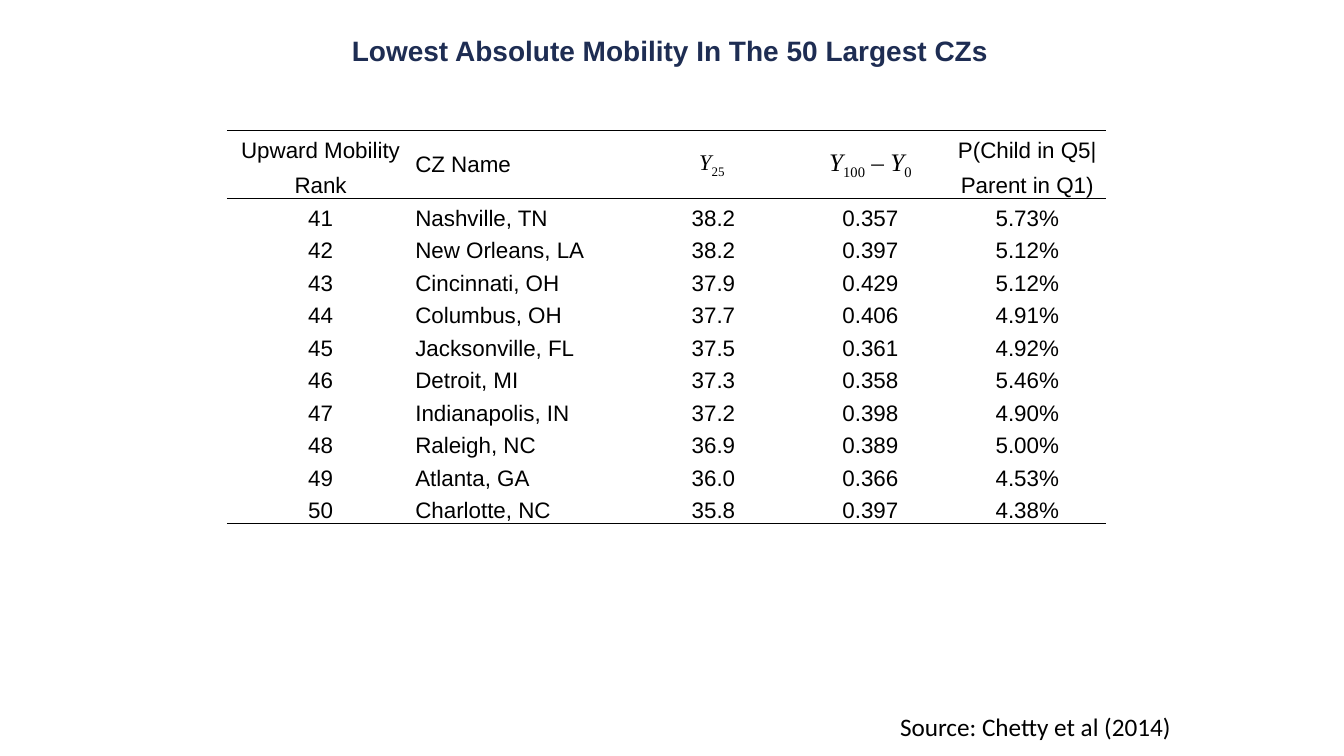
import pptx
import pptx.dml.color
import pptx.enum.text
import pptx.oxml.ns
import pptx.util
from lxml import etree

Pt = pptx.util.Pt
ALIGN = pptx.enum.text.PP_ALIGN
ANCHOR = pptx.enum.text.MSO_ANCHOR
INK, NAVY, PAPER = "000000", "1E2D53", "FFFFFF"

COLUMN_WIDTHS = [134, 157.6, 112.1, 112.1, 112.1]
HEADER_HEIGHTS = [23.5, 25.4]
CITY_HEIGHT = 23.2
CITY_COLUMN = 1
MERGED_COLUMNS = (1, 2, 3)

HEADINGS = {
    (0, 0): "Upward Mobility",
    (1, 0): "Rank",
    (0, 1): "CZ Name",
    (0, 4): "P(Child in Q5|",
    (1, 4): "Parent in Q1)",
}
FORMULAS = {
    (0, 2): (16, [("Y", "italic"), ("25 ", "sub")]),
    (0, 3): (18, [("Y", "italic"), ("100", "sub"), (" – ", ""),
                  ("Y", "italic"), ("0", "sub")]),
}
CITIES = [
    ("41", "Nashville, TN", "38.2", "0.357", "5.73%"),
    ("42", "New Orleans, LA", "38.2", "0.397", "5.12%"),
    ("43", "Cincinnati, OH", "37.9", "0.429", "5.12%"),
    ("44", "Columbus, OH", "37.7", "0.406", "4.91%"),
    ("45", "Jacksonville, FL", "37.5", "0.361", "4.92%"),
    ("46", "Detroit, MI", "37.3", "0.358", "5.46%"),
    ("47", "Indianapolis, IN", "37.2", "0.398", "4.90%"),
    ("48", "Raleigh, NC", "36.9", "0.389", "5.00%"),
    ("49", "Atlanta, GA", "36.0", "0.366", "4.53%"),
    ("50", "Charlotte, NC", "35.8", "0.397", "4.38%"),
]


def color(hex_string):
    return pptx.dml.color.RGBColor.from_string(hex_string)


def add_run(paragraph, text, size, face="Arial", ink=INK, bold=False, style=""):
    run = paragraph.add_run()
    run.text = text
    run.font.size = Pt(size)
    run.font.name = face
    run.font.bold = bold
    run.font.italic = style == "italic"
    run.font.color.rgb = color(ink)
    if style == "sub":
        run.font._element.set("baseline", "-25000")


def rule_cell(cell, ruled_sides):
    properties = cell._tc.get_or_add_tcPr()
    for side in "LRTB":
        edge = etree.SubElement(properties, pptx.oxml.ns.qn(f"a:ln{side}"))
        if side in ruled_sides:
            edge.set("w", str(Pt(1)))
            solid = etree.SubElement(edge, pptx.oxml.ns.qn("a:solidFill"))
            etree.SubElement(solid, pptx.oxml.ns.qn("a:srgbClr"), val=INK)
        else:
            etree.SubElement(edge, pptx.oxml.ns.qn("a:noFill"))
    cell.fill.solid()
    cell.fill.fore_color.rgb = color(PAPER)


def fill_cell(cell, row, column):
    merged = row < len(HEADER_HEIGHTS) and column in MERGED_COLUMNS
    cell.margin_left = cell.margin_right = cell.margin_top = Pt(0.7)
    cell.margin_bottom = Pt(0)
    cell.vertical_anchor = ANCHOR.MIDDLE if merged else ANCHOR.BOTTOM
    paragraph = cell.text_frame.paragraphs[0]
    paragraph.alignment = ALIGN.LEFT if column == CITY_COLUMN else ALIGN.CENTER
    if (row, column) in FORMULAS:
        size, parts = FORMULAS[row, column]
        for text, style in parts:
            add_run(paragraph, text, size, "Times New Roman", style=style)
    elif row < len(HEADER_HEIGHTS):
        add_run(paragraph, HEADINGS[row, column], 16)
    else:
        add_run(paragraph, CITIES[row - len(HEADER_HEIGHTS)][column], 16)


def add_mobility_table(slide, left, top):
    heights = HEADER_HEIGHTS + [CITY_HEIGHT] * len(CITIES)
    rules = (0, len(HEADER_HEIGHTS), len(heights))
    mobility = slide.shapes.add_table(
        len(heights), len(COLUMN_WIDTHS), Pt(left), Pt(top),
        Pt(sum(COLUMN_WIDTHS)), Pt(sum(heights))).table
    mobility.first_row = mobility.horz_banding = False
    for column, width in zip(mobility.columns, COLUMN_WIDTHS):
        column.width = Pt(width)
    for row, height in zip(mobility.rows, heights):
        row.height = Pt(height)
    for column in MERGED_COLUMNS:
        mobility.cell(0, column).merge(mobility.cell(1, column))
    for row in range(len(heights)):
        for column in range(len(COLUMN_WIDTHS)):
            cell = mobility.cell(row, column)
            last = row + (cell.span_height if cell.is_merge_origin else 1)
            rule_cell(cell, ("T" if row in rules else "") + ("B" if last in rules else ""))
            if not cell.is_spanned:
                fill_cell(cell, row, column)


def add_title(slide, left, top, width, height):
    frame = slide.shapes.add_textbox(Pt(left), Pt(top), Pt(width), Pt(height)).text_frame
    frame.margin_left = frame.margin_right = frame.margin_top = frame.margin_bottom = 0
    frame.word_wrap = False
    frame.auto_size = pptx.enum.text.MSO_AUTO_SIZE.SHAPE_TO_FIT_TEXT
    add_run(frame.paragraphs[0], "Lowest Absolute Mobility In The 50 Largest CZs",
            20, ink=NAVY, bold=True)


def add_citation(slide, left, top, width, height):
    frame = slide.shapes.add_textbox(Pt(left), Pt(top), Pt(width), Pt(height)).text_frame
    frame.word_wrap = True
    frame.paragraphs[0].line_spacing = 0.9
    add_run(frame.paragraphs[0], "Source: Chetty et al (2014)", 18, "Calibri")


def main():
    deck = pptx.Presentation()
    deck.slide_width, deck.slide_height = Pt(960), Pt(540)
    slide = deck.slides.add_slide(deck.slide_layouts[6])
    add_mobility_table(slide, 162, 93)
    add_title(slide, 251.3, 23.8, 458, 24.5)
    add_citation(slide, 635.8, 506.9, 369.4, 33.8)
    deck.save("out.pptx")


if __name__ == "__main__":
    main()
